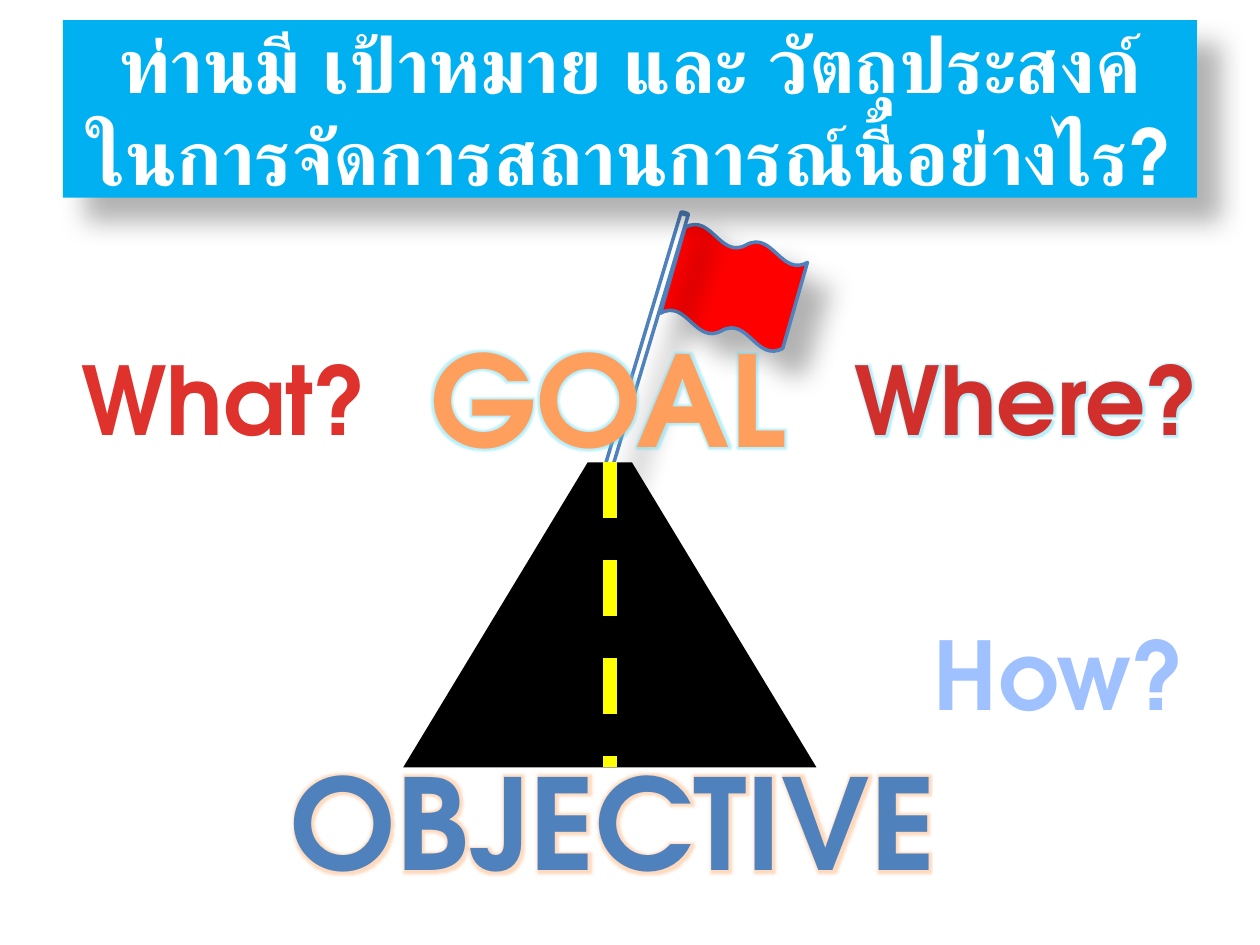
from lxml.etree import SubElement
from pptx import Presentation
from pptx.dml.color import RGBColor
from pptx.enum.dml import MSO_LINE
from pptx.enum.shapes import MSO_CONNECTOR, MSO_SHAPE
from pptx.enum.text import MSO_ANCHOR, MSO_AUTO_SIZE, PP_ALIGN
from pptx.oxml.ns import qn
from pptx.util import Inches, Pt


def color(value):
    """Turn a hex string into a colour."""
    return RGBColor.from_string(value)


def add_effect(properties, kind, value, opacity, **attributes):
    """Append one glow or shadow to a shape's or a run's properties."""
    effects = properties.find(qn("a:effectLst"))
    if effects is None:
        effects = SubElement(properties, qn("a:effectLst"))
    effect = SubElement(effects, qn(f"a:{kind}"), {k: str(v) for k, v in attributes.items()})
    tint = SubElement(effect, qn("a:srgbClr"), val=value)
    SubElement(tint, qn("a:alpha"), val=str(opacity * 1000))


class GoalSlide:
    """Hold the style and the current slide, on a grid of 100 columns by 75 rows."""

    font = "TeX Gyre Adventor"
    outline = "4F81BD"

    def __init__(self, presentation):
        """Start a blank slide and measure its grid."""
        self.slide = presentation.slides.add_slide(presentation.slide_layouts[6])
        self.column = presentation.slide_width / 100
        self.row = presentation.slide_height / 75

    def place(self, left, top, width, height):
        """Convert a grid box into lengths."""
        return (int(left * self.column), int(top * self.row),
                int(width * self.column), int(height * self.row))

    def shape(self, preset, box, fill, lined=False, rotation=0, shadow=False):
        """Add a filled preset shape."""
        shape = self.slide.shapes.add_shape(preset, *self.place(*box))
        shape.rotation = rotation
        shape.fill.solid()
        shape.fill.fore_color.rgb = color(fill)
        if lined:
            shape.line.color.rgb = color(self.outline)
            shape.line.width = Pt(2)
        else:
            shape.line.fill.background()
        shape.shadow.inherit = False
        if shadow:
            add_effect(shape.element.spPr, "outerShdw", "000000", 30, blurRad=Pt(15),
                       dist=Pt(18), dir=45 * 60000, algn="tl", rotWithShape=0)
        return shape

    def dashes(self, start, end, value, width):
        """Add a dashed straight line between two grid points."""
        line = self.slide.shapes.add_connector(
            MSO_CONNECTOR.STRAIGHT, *self.place(*start, *end))
        line.line.color.rgb = color(value)
        line.line.width = Pt(width)
        line.line.dash_style = MSO_LINE.DASH
        SubElement(line.element.spPr, qn("a:effectLst"))

    def add_lines(self, frame, lines, size, value, glow=None):
        """Put centred bold lines into a text frame."""
        paragraph = frame.paragraphs[0]
        paragraph.alignment = PP_ALIGN.CENTER
        for index, line in enumerate(lines):
            if index:
                paragraph.add_line_break()
            run = paragraph.add_run()
            run.text = line
            run.font.size = Pt(size)
            run.font.bold = True
            run.font.color.rgb = color(value)
            properties = run._r.get_or_add_rPr()
            if glow:
                add_effect(properties, "glow", glow, 40, rad=Pt(4))
            for script in ("latin", "cs"):
                SubElement(properties, qn(f"a:{script}"), typeface=self.font)

    def word(self, text, box, size, value, glow=None, wrap=False):
        """Add one large word."""
        frame = self.slide.shapes.add_textbox(*self.place(*box)).text_frame
        frame.word_wrap = wrap
        frame.auto_size = MSO_AUTO_SIZE.SHAPE_TO_FIT_TEXT
        self.add_lines(frame, [text], size, value, glow)

    def title(self, lines, box):
        """Add the title banner."""
        frame = self.shape(MSO_SHAPE.RECTANGLE, box, "00B0F0", shadow=True).text_frame
        frame.word_wrap = True
        frame.vertical_anchor = MSO_ANCHOR.MIDDLE
        self.add_lines(frame, lines, 44, "FFFFFF")


def main():
    """Build and save the slide."""
    presentation = Presentation()
    presentation.slide_width = Inches(10)
    presentation.slide_height = Inches(7.5)
    page = GoalSlide(presentation)

    page.shape(MSO_SHAPE.DOUBLE_WAVE, (53.2, 18.8, 10.1, 8.1), "FF0000", True, 16, True)
    page.shape(MSO_SHAPE.CAN, (50.8, 16.4, 0.6, 22.7), "FFFFFF", True, 16.7, True)
    page.word("GOAL", (30.9, 25, 34.7, 13.1), 72, "FF9F5D", "4FD8F5", wrap=True)
    page.word("OBJECTIVE", (18.4, 58.6, 60.5, 13.1), 72, "4F81BD", "FAA45F")

    road = page.shape(MSO_SHAPE.TRAPEZOID, (32, 36.7, 32.8, 24.2), "000000")
    road.adjustments[0] = 0.605
    page.dashes((48.4, 36.7), (48.4, 60.9), "FFFF00", 8)

    page.title(["ท่านมี เป้าหมาย และ วัตถุประสงค์", "ในการจัดการสถานการณ์นี้อย่างไร?"],
               (5, 1.6, 90, 14.1))

    page.word("Where?", (66.4, 26.6, 30.2, 10.1), 54, "D02F2C", "4FD8F5")
    page.word("What?", (5.1, 26.6, 25.4, 10.1), 54, "E0322D")
    page.word("How?", (72.7, 48.4, 22.8, 10.1), 54, "A0C1FF")

    presentation.save("out.pptx")


if __name__ == "__main__":
    main()
